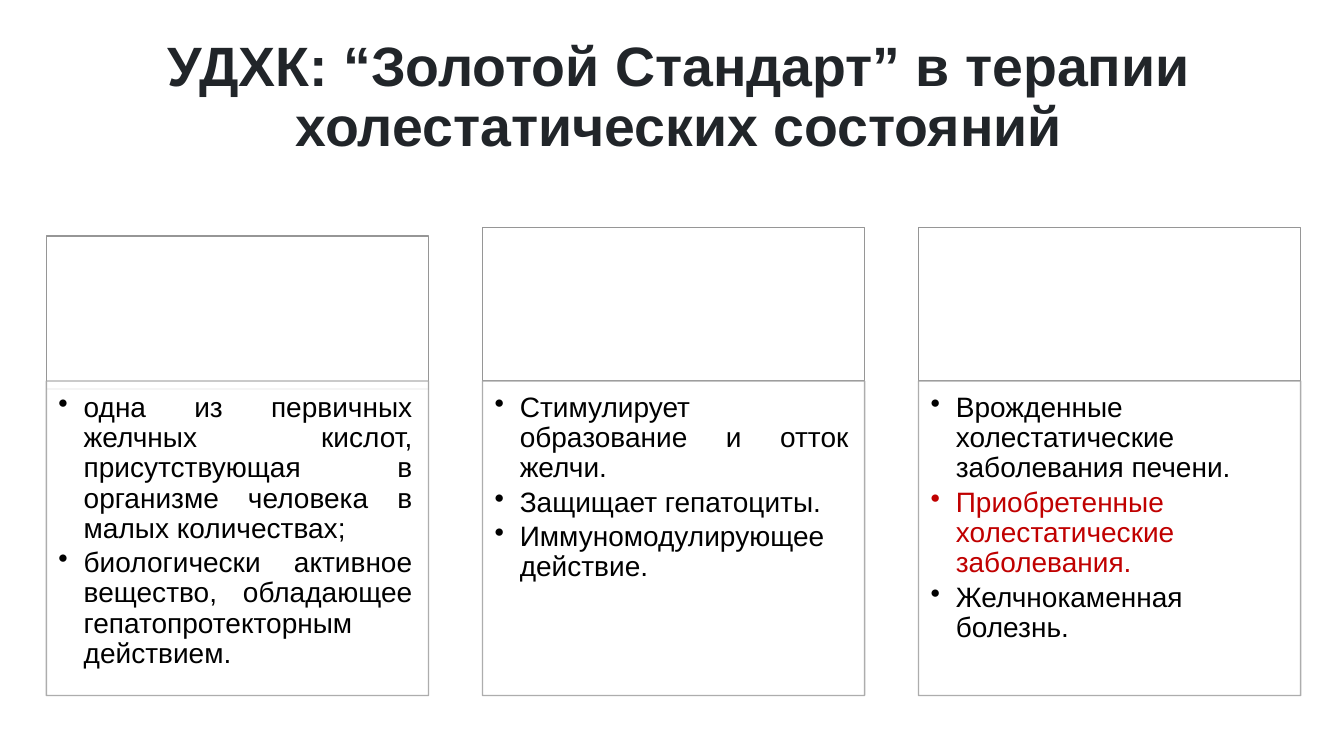
import pptx
import pptx.dml.color
import pptx.enum.shapes
import pptx.enum.text
import pptx.oxml
import pptx.oxml.ns
import pptx.util
import lxml.etree

Inches = pptx.util.Inches
Pt = pptx.util.Pt
ALIGN = pptx.enum.text.PP_ALIGN
ANCHOR = pptx.enum.text.MSO_ANCHOR

COLORS = {
    "white": "FFFFFF",
    "title": "212529",
    "text": "000000",
    "accent": "C00000",
    "header_line": "969696",
    "body_line": "A5A5A5",
}

TITLE = "УДХК: “Золотой Стандарт” в терапии холестатических состояний"

# Each column: top of its header box, then (text, colour) bullets
COLUMNS = [
    (2.34, [
        ("одна из первичных желчных кислот, присутствующая в организме "
         "человека в малых количествах;", "text"),
        ("биологически активное вещество, обладающее "
         "гепатопротекторным действием.", "text"),
    ]),
    (2.26, [
        ("Стимулирует образование и отток желчи.", "text"),
        ("Защищает гепатоциты.", "text"),
        ("Иммуномодулирующее действие.", "text"),
    ]),
    (2.26, [
        ("Врожденные холестатические заболевания печени.", "text"),
        ("Приобретенные холестатические заболевания.", "accent"),
        ("Желчнокаменная болезнь.", "text"),
    ]),
]
FIRST_LEFT, LAST_LEFT = 0.46, 9.11
COLUMN_STEP = (LAST_LEFT - FIRST_LEFT) / (len(COLUMNS) - 1)
COLUMN_WIDTH = 3.79
HEADER_HEIGHT = 1.52
BODY_TOP, BODY_HEIGHT = 3.78, 3.12


def rgb(name):
    return pptx.dml.color.RGBColor.from_string(COLORS[name])


def apply(target, values):
    for name, value in values.items():
        setattr(target, name, value)


class ColumnSlide:
    """Holds the text style and the slide being filled."""

    font = {"name": "Arial", "size": Pt(20)}
    title_font = {"name": "Arial", "size": Pt(39.6), "bold": True}
    title_frame = {"word_wrap": True, "vertical_anchor": ANCHOR.MIDDLE,
                   "auto_size": pptx.enum.text.MSO_AUTO_SIZE.NONE}
    body_frame = {"word_wrap": True, "vertical_anchor": ANCHOR.TOP,
                  "margin_left": Inches(0.12), "margin_top": Inches(0.12),
                  "margin_right": Inches(0.16), "margin_bottom": Inches(0.17)}
    bullet_format = {"alignment": ALIGN.JUSTIFY, "level": 1,
                     "line_spacing": 0.9, "space_before": Pt(0),
                     "space_after": Pt(3)}

    def __init__(self, slide):
        self.slide = slide

    def title(self, text, left, top, width, height):
        heading = self.slide.shapes.title
        apply(heading, {"left": Inches(left), "top": Inches(top),
                        "width": Inches(width), "height": Inches(height)})
        apply(heading.text_frame, self.title_frame)
        heading.text_frame.text = text
        paragraph = heading.text_frame.paragraphs[0]
        apply(paragraph, {"alignment": ALIGN.CENTER, "line_spacing": 0.9})
        apply(paragraph.runs[0].font, self.title_font)
        paragraph.runs[0].font.color.rgb = rgb("title")

    def box(self, left, top, width, height, line, opacity=100):
        panel = self.slide.shapes.add_shape(
            pptx.enum.shapes.MSO_SHAPE.RECTANGLE,
            Inches(left), Inches(top), Inches(width), Inches(height))
        panel.shadow.inherit = False
        panel.fill.solid()
        panel.fill.fore_color.rgb = rgb("white")
        panel.line.color.rgb = rgb(line)
        panel.line.width = Pt(1)
        if opacity < 100:
            properties = panel.fill._xPr
            for color in properties.iter(pptx.oxml.ns.qn("a:srgbClr")):
                alpha = lxml.etree.SubElement(color, pptx.oxml.ns.qn("a:alpha"))
                alpha.set("val", str(opacity * 1000))
        return panel

    def bullets(self, panel, items):
        frame = panel.text_frame
        apply(frame, self.body_frame)
        for index, (text, color) in enumerate(items):
            paragraph = frame.add_paragraph() if index else frame.paragraphs[0]
            apply(paragraph, self.bullet_format)
            run = paragraph.add_run()
            run.text = text
            apply(run.font, self.font)
            run.font.color.rgb = rgb(color)
            # Hanging bullet
            properties = paragraph._p.get_or_add_pPr()
            properties.set("marL", str(Inches(0.25)))
            properties.set("indent", str(-Inches(0.25)))
            mark = lxml.etree.SubElement(properties, pptx.oxml.ns.qn("a:buChar"))
            mark.set("char", "•")


def main():
    deck = pptx.Presentation()
    deck.slide_width, deck.slide_height = Inches(13.33), Inches(7.5)
    page = ColumnSlide(deck.slides.add_slide(deck.slide_layouts[5]))

    # Title
    page.title(TITLE, 0.46, 0.4, 12.55, 1.16)

    # Columns: empty header box above a bulleted body box
    for index, (header_top, items) in enumerate(COLUMNS):
        left = FIRST_LEFT + index * COLUMN_STEP
        page.box(left, header_top, COLUMN_WIDTH, HEADER_HEIGHT, "header_line")
        body = page.box(left, BODY_TOP, COLUMN_WIDTH, BODY_HEIGHT,
                        "body_line", opacity=90)
        page.bullets(body, items)

    deck.save("out.pptx")


if __name__ == "__main__":
    main()
